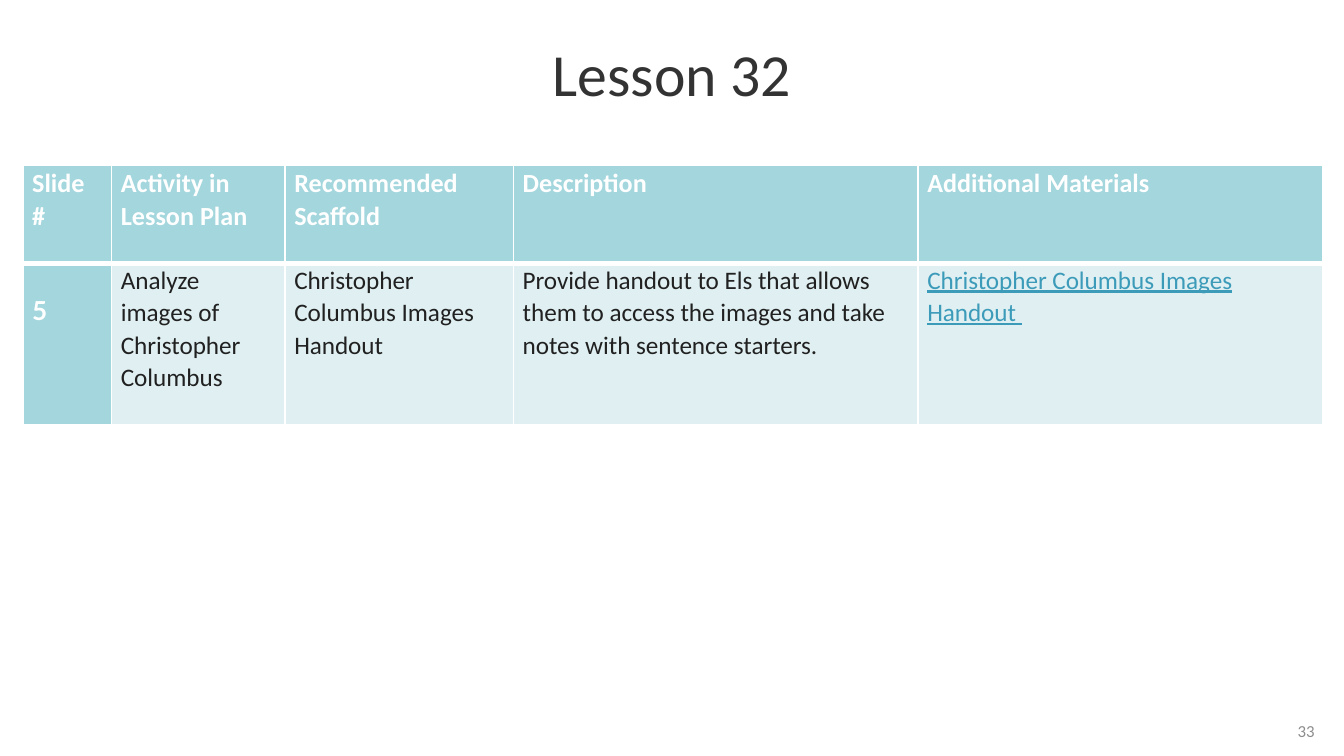
"""Build the Lesson 32 scaffold table slide."""
from lxml.etree import SubElement
from pptx import Presentation
from pptx.dml.color import RGBColor
from pptx.enum.text import MSO_ANCHOR, PP_ALIGN
from pptx.oxml.ns import qn
from pptx.util import Inches, Pt

THEME = {
    "white": "FFFFFF", "title": "333333", "number": "8D8D8D", "body": "212121",
    "link": "3D9BBA", "head_fill": "A3D6DD", "body_fill": "E0F0F2",
    "title_size": 32, "head_size": 14, "body_size": 13.5, "number_size": 9,
    "font": "Calibri", "index_font": "Lato",
}


def write(tf, text, color, size, font="font", spacing=1.0, align=PP_ALIGN.LEFT, **extra):
    p = tf.paragraphs[0]
    p.alignment, p.line_spacing = align, spacing
    r = p.add_run()
    r.text = text
    values = {"name": THEME[font], "size": Pt(THEME[size]), **extra}
    for name, value in values.items():
        setattr(r.font, name, value)
    r.font.color.rgb = RGBColor.from_string(THEME[color])


def add_borders(cell, widths):
    for side, width in widths.items():
        ln = SubElement(cell._tc.get_or_add_tcPr(), qn(f"a:ln{side}"), w=str(Pt(width)))
        fill = SubElement(ln, qn("a:solidFill"))
        SubElement(fill, qn("a:srgbClr"), val=THEME["white"])


prs = Presentation()
prs.slide_width, prs.slide_height = Inches(10), Inches(10 * 9 / 16)
s = prs.slides.add_slide(prs.slide_layouts[6])

labels = [
    ("Lesson 32", (0, 0, 10, 1.15),
     {"color": "title", "size": "title_size", "align": PP_ALIGN.CENTER, "spacing": 0.9}),
    ("33", (7.44, 5.25, 2.44, 0.38),
     {"color": "number", "size": "number_size", "align": PP_ALIGN.RIGHT}),
]
for text, box, style in labels:
    tf = s.shapes.add_textbox(*map(Inches, box)).text_frame
    tf.word_wrap, tf.vertical_anchor = True, MSO_ANCHOR.MIDDLE
    write(tf, text, **style)

rows = [
    ["Slide #", "Activity in Lesson Plan", "Recommended Scaffold", "Description",
     "Additional Materials"],
    ["5", "Analyze images of Christopher Columbus", "Christopher Columbus Images Handout",
     "Provide handout to Els that allows them to access the images and take notes "
     "with sentence starters.", "Christopher Columbus Images Handout "],
]
col_widths = [0.66, 1.29, 1.7, 3.01, 3.01]
row_heights = [0.73, 1.2]
head = {"color": "white", "size": "head_size", "spacing": 1.06, "bold": True}
index = {**head, "font": "index_font", "spacing": 2.0}
body = {"color": "body", "size": "body_size", "spacing": 1.06, "bold": False}
link = {**body, "color": "link", "underline": True}
styles = [[head] * 5, [index, body, body, body, link]]
margins = {"margin_left": 0.07, "margin_right": 0.07, "margin_top": 0, "margin_bottom": 0}
borders = [{"L": 1, "R": 1, "T": 1, "B": 3}, {"L": 1, "R": 1, "T": 3, "B": 1}]

table = s.shapes.add_table(2, 5, Inches(0.17), Inches(1.23), Inches(sum(col_widths)),
                           Inches(sum(row_heights))).table
for column, width in zip(table.columns, col_widths):
    column.width = Inches(width)
for i, height in enumerate(row_heights):
    table.rows[i].height = Inches(height)
    for j, text in enumerate(rows[i]):
        cell = table.cell(i, j)
        for name, value in margins.items():
            setattr(cell, name, Inches(value))
        add_borders(cell, borders[i])
        cell.fill.solid()
        fill = "head_fill" if i == 0 or j == 0 else "body_fill"
        cell.fill.fore_color.rgb = RGBColor.from_string(THEME[fill])
        write(cell.text_frame, text, **styles[i][j])

prs.save("out.pptx")
